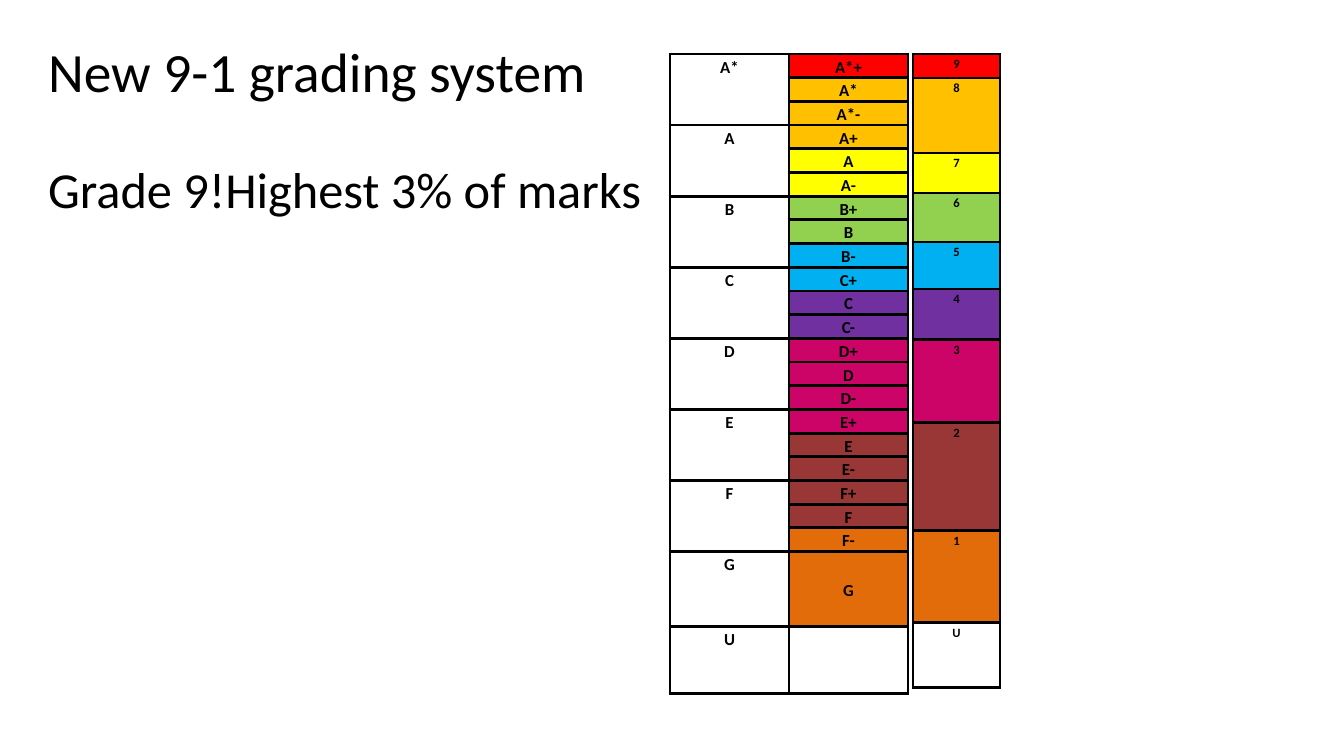
from lxml import etree
from pptx import Presentation
from pptx import util as u
from pptx.dml.color import RGBColor
from pptx.enum import text
from pptx.oxml.ns import qn

PX = 914400 / 100.8
FONT = "Calibri"
COLORS = {
    "black": "000000", "red": "FF0000", "amber": "FFC000", "yellow": "FFFF00",
    "green": "92D050", "blue": "00B0F0", "purple": "7030A0", "pink": "CC0468",
    "brown": "993737", "orange": "E36C0A",
}
TITLE_LINES = [("New 9-1 grading system", 39.6, 0), ("Grade 9!Highest 3% of marks", 36, 43)]
LETTERS = ["A*", "A", "B", "C", "D", "E", "F"]
SUFFIXES = ["+", "", "-"]
SUBGRADE_HEIGHTS = [23, 23, 24]
BANDS = [
    ("9", "red", 24, 1), ("8", "amber", 75, 3), ("7", "yellow", 40, 2),
    ("6", "green", 49, 2), ("5", "blue", 47, 2), ("4", "purple", 51, 2),
    ("3", "pink", 83, 4), ("2", "brown", 108, 4), ("1", "orange", 92, 2),
    ("U", None, 65, 1),
]


def px(length):
    """Turn a length in px into EMU."""
    return u.Emu(round(length * PX))


def add_run(paragraph, words, size, bold=False):
    """Add one formatted black run."""
    run = paragraph.add_run()
    run.text = words
    run.font.name = FONT
    run.font.size = u.Pt(size)
    run.font.bold = bold
    run.font.color.rgb = RGBColor.from_string(COLORS["black"])


def add_borders(cell):
    """Draw a black line on each side of a cell."""
    properties = cell._tc.get_or_add_tcPr()
    for index, side in enumerate(["lnL", "lnR", "lnT", "lnB"]):
        line = etree.Element(qn(f"a:{side}"), w=str(u.Pt(2.25)))
        fill = etree.SubElement(line, qn("a:solidFill"))
        etree.SubElement(fill, qn("a:srgbClr"), val=COLORS["black"])
        properties.insert(index, line)


def fill_cell(cell, words, color, size, inset):
    """Write a centred bold grade in a cell and colour it."""
    cell.margin_left = cell.margin_right = px(inset)
    cell.margin_top = cell.margin_bottom = 0
    paragraph = cell.text_frame.paragraphs[0]
    paragraph.alignment = text.PP_ALIGN.CENTER
    paragraph.line_spacing = 1.15
    if words:
        add_run(paragraph, words, size, True)
    if color:
        cell.fill.solid()
        cell.fill.fore_color.rgb = RGBColor.from_string(COLORS[color])
    else:
        cell.fill.background()


def add_grid(slide, left, top, widths, heights):
    """Add a plain bordered table with the given column widths and row heights."""
    frame = slide.shapes.add_table(len(heights), len(widths), px(left), px(top),
                                   px(sum(widths)), px(sum(heights)))
    table = frame.table
    table.first_row = table.horz_banding = False
    for column, width in zip(table.columns, widths):
        column.width = px(width)
    for row, height in zip(table.rows, heights):
        row.height = px(height)
    for cell in table.iter_cells():
        add_borders(cell)
    return table


def add_title(slide, left, top, width, height):
    """Place the heading and the statement below it in the title placeholder."""
    title = slide.shapes.title
    title.left, title.top, title.width, title.height = map(px, (left, top, width, height))
    frame = title.text_frame
    frame.word_wrap = True
    frame.auto_size = text.MSO_AUTO_SIZE.NONE
    frame.vertical_anchor = text.MSO_ANCHOR.TOP
    frame.margin_top = px(24)
    for index, (words, size, gap) in enumerate(TITLE_LINES):
        paragraph = frame.add_paragraph() if index else frame.paragraphs[0]
        paragraph.alignment = text.PP_ALIGN.LEFT
        paragraph.line_spacing = 0.9
        paragraph.space_before = u.Pt(gap)
        add_run(paragraph, words, size)


def add_letter_table(slide, left, top, width):
    """Add the letter grades beside their coloured subgrades."""
    heights = SUBGRADE_HEIGHTS * len(LETTERS) + [75, 67]
    table = add_grid(slide, left, top, [width // 2] * 2, heights)
    subgrades = [letter + suffix for letter in LETTERS for suffix in SUFFIXES] + ["G", ""]
    colors = [color for _, color, _, count in BANDS for _ in range(count)]
    for row, (subgrade, color) in enumerate(zip(subgrades, colors)):
        fill_cell(table.cell(row, 1), subgrade, color, 12, 6)
    for index, letter in enumerate(LETTERS + ["G", "U"]):
        row = 3 * index if index < len(LETTERS) else len(heights) - 9 + index
        cell = table.cell(row, 0)
        if index < len(LETTERS):
            cell.merge(table.cell(row + 2, 0))
        fill_cell(cell, letter, None, 12, 6)
    table.cell(len(heights) - 2, 1).vertical_anchor = text.MSO_ANCHOR.MIDDLE


def add_number_table(slide, left, top, width):
    """Add the column of number grades."""
    table = add_grid(slide, left, top, [width], [height for _, _, height, _ in BANDS])
    for row, (number, color, _, _) in enumerate(BANDS):
        fill_cell(table.cell(row, 0), number, color, 9, 5)


def main():
    """Build and save the grading slide."""
    presentation = Presentation()
    presentation.slide_width, presentation.slide_height = px(1344), px(756)
    slide = presentation.slides.add_slide(presentation.slide_layouts[5])
    add_title(slide, 38, 21, 615, 461)
    add_letter_table(slide, 670, 54, 238)
    add_number_table(slide, 913, 54, 87)
    presentation.save("out.pptx")


if __name__ == "__main__":
    main()
